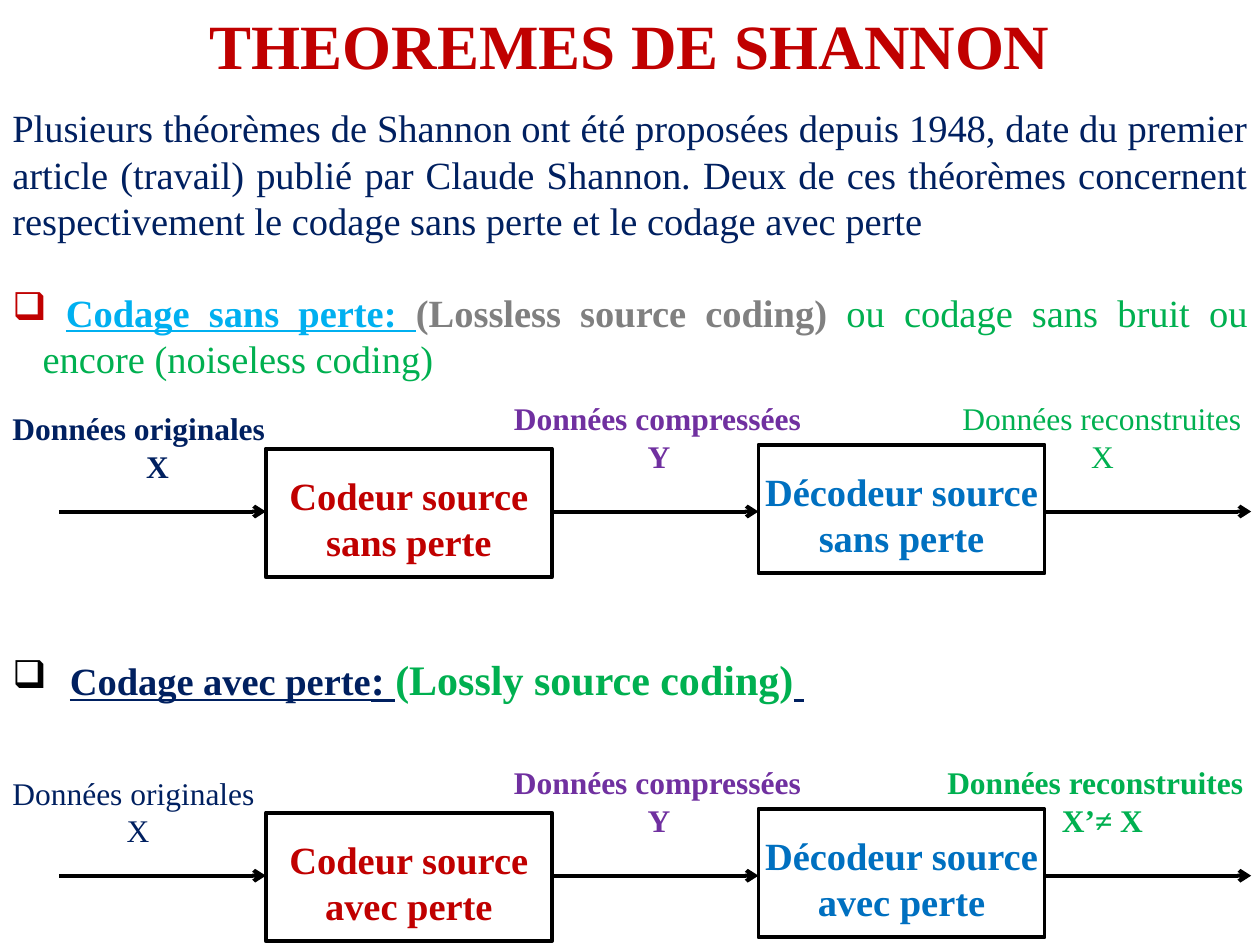
from lxml.etree import SubElement
from pptx import Presentation
from pptx.dml.color import RGBColor
from pptx.enum.shapes import MSO_CONNECTOR, MSO_SHAPE
from pptx.enum.text import MSO_ANCHOR, PP_ALIGN
from pptx.oxml.ns import qn
from pptx.util import Inches, Pt

NAVY, RED, GREEN, PURPLE = "002060", "C00000", "00B050", "7030A0"
BLUE, CYAN, GRAY, BLACK = "0070C0", "00B0F0", "808080", "000000"


def color(value):
    return RGBColor.from_string(value)


def add_run(p, text, size, value, bold=False, underline=False):
    r = p.add_run()
    r.text = text
    r.font.name = "Times New Roman"
    r.font.size = Pt(size)
    r.font.color.rgb = color(value)
    r.font.bold = bold
    r.font.underline = underline


prs = Presentation()
prs.slide_width, prs.slide_height = Inches(10), Inches(7.5)
s = prs.slides.add_slide(prs.slide_layouts[5])

# Title
title = s.shapes.title
title.left, title.top, title.width, title.height = 0, 0, prs.slide_width, Inches(0.71)
title.text_frame.vertical_anchor = MSO_ANCHOR.MIDDLE
p = title.text_frame.paragraphs[0]
p.alignment = PP_ALIGN.CENTER
add_run(p, "THEOREMES DE SHANNON", 36, RED, bold=True)

# Introduction and lossless heading
tf = s.shapes.add_textbox(0, Inches(0.78), prs.slide_width, Inches(2.35)).text_frame
tf.word_wrap = True
p = tf.paragraphs[0]
p.alignment = PP_ALIGN.JUSTIFY
add_run(p, "Plusieurs théorèmes de Shannon ont été proposées depuis 1948, date du premier "
           "article (travail) publié par Claude Shannon. Deux de ces théorèmes concernent "
           "respectivement le codage sans perte et le codage avec perte", 22, NAVY)
lossless = tf.add_paragraph()
lossless.alignment = PP_ALIGN.JUSTIFY
lossless.space_before = Pt(26)
add_run(lossless, " ", 22, RED, bold=True)
add_run(lossless, "Codage sans perte: ", 22, CYAN, bold=True, underline=True)
add_run(lossless, "(Lossless source coding) ", 22, GRAY, bold=True)
add_run(lossless, "ou codage sans bruit ou encore (noiseless coding)", 22, GREEN)

# Lossy heading
tf = s.shapes.add_textbox(0, Inches(5.14), Inches(8.94), Inches(0.5)).text_frame
tf.word_wrap = True
lossy = tf.paragraphs[0]
add_run(lossy, " ", 22, BLACK, bold=True)
add_run(lossy, "Codage avec perte", 22, NAVY, bold=True, underline=True)
add_run(lossy, ": ", 24, NAVY, bold=True, underline=True)
add_run(lossy, "(Lossly source coding)", 24, GREEN, bold=True)
add_run(lossy, " ", 24, NAVY, bold=True, underline=True)

# Heading bullets with hanging indents
for p, indent in ((lossless, 0.24), (lossy, 0.38)):
    pPr = p._p.get_or_add_pPr()
    pPr.set("marL", str(Inches(indent)))
    pPr.set("indent", str(-Inches(indent)))
    SubElement(pPr, qn("a:buChar")).set("char", "❑")

# Coding chains: arrows and boxes alternate along each row
START, ARROW_W, BOX_W, BOX_H = 0.47, 1.64, 2.27, 1.02
PITCH = ARROW_W + BOX_W
BOXES = (("Codeur source", RED, 0.5), ("Décodeur source", BLUE, 0.53))
# Each label: text, symbol, colour, bold, left, width, rise above the arrows
chains = (
    (4.06, "sans perte", (
        ("Données originales", "X", NAVY, True, 0, 2.5, 0.86),
        ("Données compressées", "Y", PURPLE, True, 3.98, 2.5, 0.94),
        ("Données reconstruites", "X", GREEN, False, 7.54, 2.42, 0.94))),
    (6.95, "avec perte", (
        ("Données originales", "X", NAVY, False, 0, 2.19, 0.86),
        ("Données compressées", "Y", PURPLE, True, 3.98, 2.5, 0.94),
        ("Données reconstruites", "X’≠ X", GREEN, True, 7.42, 2.66, 0.94))),
)
for row, kind, labels in chains:
    # Boxes
    for col, (name, value, rise) in enumerate(BOXES):
        x = START + ARROW_W + col * PITCH
        sp = s.shapes.add_shape(MSO_SHAPE.RECTANGLE, Inches(x), Inches(row - rise),
                                Inches(BOX_W), Inches(BOX_H))
        sp.shadow.inherit = False
        sp.fill.background()
        sp.line.color.rgb = color(BLACK)
        sp.line.width = Pt(2.25)
        tf = sp.text_frame
        tf.word_wrap = True
        tf.vertical_anchor = MSO_ANCHOR.MIDDLE
        tf.margin_left = tf.margin_right = tf.margin_bottom = 0
        tf.margin_top = Inches(0.08)
        p = tf.paragraphs[0]
        p.alignment = PP_ALIGN.CENTER
        add_run(p, f"{name} {kind}", 22, value, bold=True)

    # Arrows
    for col in range(3):
        x = START + col * PITCH
        line = s.shapes.add_connector(MSO_CONNECTOR.STRAIGHT, Inches(x), Inches(row),
                                      Inches(x + ARROW_W), Inches(row))
        line.line.color.rgb = color(BLACK)
        line.line.width = Pt(2.25)
        SubElement(line.line._get_or_add_ln(), qn("a:tailEnd")).set("type", "arrow")
        SubElement(line._element.spPr, qn("a:effectLst"))

    # Labels
    for text, symbol, value, bold, x, width, rise in labels:
        tf = s.shapes.add_textbox(Inches(x), Inches(row - rise),
                                  Inches(width), Inches(0.71)).text_frame
        tf.word_wrap = True
        add_run(tf.paragraphs[0], text, 18, value, bold)
        p = tf.add_paragraph()
        p.alignment = PP_ALIGN.CENTER
        add_run(p, symbol, 18, value, bold)

prs.save("out.pptx")
